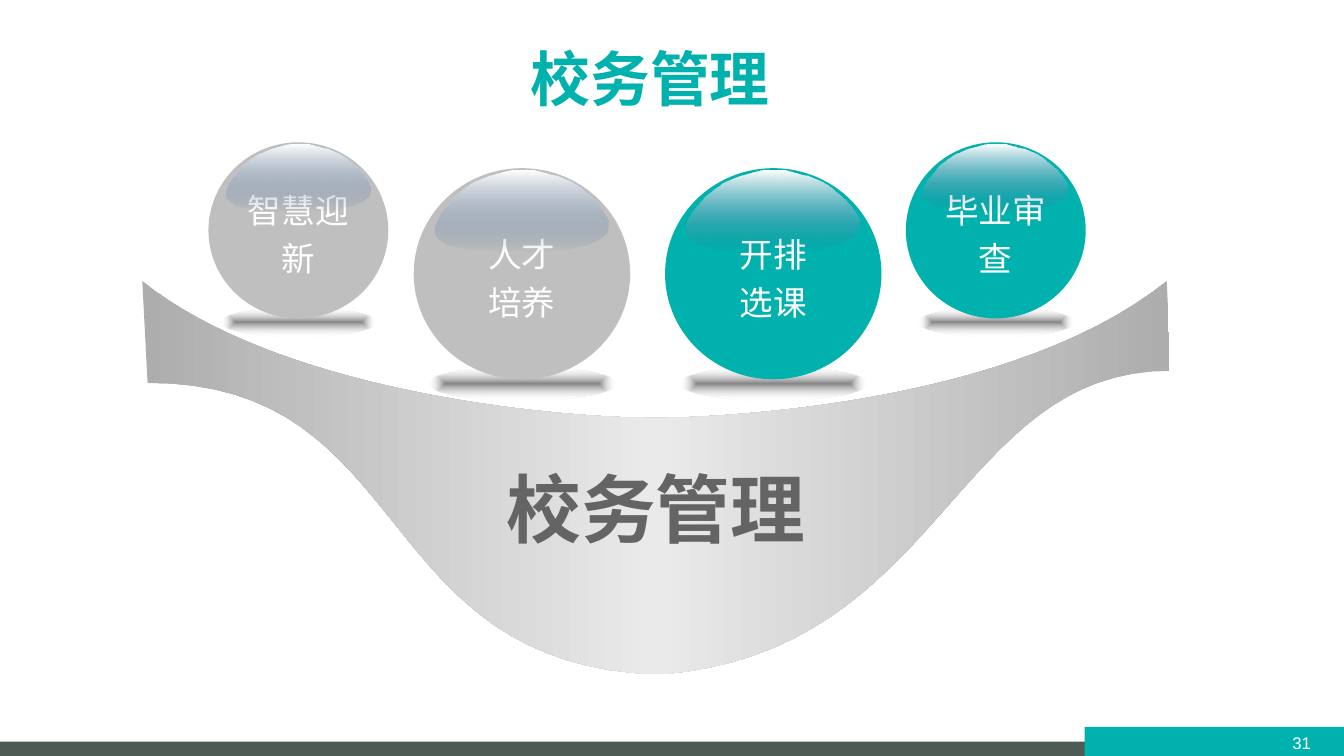
"""Build a slide of four glossy balls above a curved bowl."""
import pptx
import pptx.util
import pptx.oxml
import pptx.oxml.ns
import pptx.dml.color
import pptx.enum.shapes
import pptx.enum.text

Cm = pptx.util.Cm
Pt = pptx.util.Pt
HUES = {
    "teal": "00B1AD", "slate": "4E5A54", "gray": "BFBFBF", "white": "FFFFFF",
    "dark": "646464", "shade": "868686", "edge": "ADADAD", "mid": "EAEAEA",
    "blue": "376092",
}
CJK = "Noto Sans CJK SC"
SMALL = (3.4, 3.33)
LARGE = (4.09, 3.99)
BALLS = [
    ("毕业审查", 17.12, 2.69, SMALL, "teal"),
    ("开排\n选课", 12.57, 3.18, LARGE, "teal"),
    ("人才\n培养", 7.82, 3.18, LARGE, "gray"),
    ("智慧迎新", 3.94, 2.69, SMALL, "gray"),
]
GLOSS = [
    (125, 33), (127, 37), (127, 40), (126, 43), (125, 46), (122, 48),
    (119, 50), (115, 52), (110, 54), (105, 55), (99, 57), (93, 58),
    (86, 58), (79, 59), (45, 59), (39, 59), (33, 58), (28, 58), (22, 57),
    (17, 56), (13, 55), (9, 54), (6, 52), (3, 50), (1, 48), (0, 46),
    (0, 40), (1, 37), (4, 31), (9, 25), (14, 19), (19, 15), (26, 10),
    (32, 7), (40, 4), (47, 2), (56, 0), (73, 0), (81, 2), (89, 4),
    (97, 7), (104, 11), (110, 16), (116, 21), (121, 27),
]
BOWL = [
    [(22.05, 5.31), (22.05, 5.31), (22.1, 6.17), (22.1, 7.01)],
    [(22.1, 7.01), (18.03, 7.01), (17.83, 12.34), (12.47, 12.75)],
    [(12.47, 12.75), (6.96, 12.6), (7.9, 7.21), (2.79, 7.24)],
    [(2.69, 5.31), (5.16, 7.32), (10.13, 7.9), (12.45, 7.9)],
    [(12.45, 7.9), (12.45, 7.9), (18.87, 7.9), (22.05, 5.31)],
]


def tint(name):
    """Return the named colour."""
    return pptx.dml.color.RGBColor.from_string(HUES[name])


def finish(shape, hue=None):
    """Drop shadow and line, and fill with one colour if given."""
    shape.shadow.inherit = False
    shape.line.fill.background()
    if hue:
        shape.fill.solid()
        shape.fill.fore_color.rgb = tint(hue)
    else:
        shape.fill.background()


def blend(shape, stops, kind):
    """Fill a shape with gradient stops of position, colour and opacity."""
    marks = "".join(
        f'<a:gs pos="{pos * 1000}"><a:srgbClr val="{HUES[hue]}">'
        f'<a:alpha val="{alpha * 1000}"/></a:srgbClr></a:gs>'
        for pos, hue, alpha in stops)
    grad = pptx.oxml.parse_xml(
        f'<a:gradFill {pptx.oxml.ns.nsdecls("a")} rotWithShape="1">'
        f'<a:gsLst>{marks}</a:gsLst>{kind}</a:gradFill>')
    finish(shape)
    props = shape.element.spPr
    props.replace(props.find(pptx.oxml.ns.qn("a:noFill")), grad)


def linear(angle):
    """Return the direction of a linear gradient."""
    return f'<a:lin ang="{angle * 60000}" scaled="0"/>'


def write(shape, text, size, hue, font="Calibri", bold=False, gap=None,
          inset=(0.25, 0.13, 0.25, 0.13), anchor="MIDDLE"):
    """Set centred text and its format."""
    frame = shape.text_frame
    frame.text = text
    frame.word_wrap = True
    frame.vertical_anchor = pptx.enum.text.MSO_ANCHOR[anchor]
    (frame.margin_left, frame.margin_top,
     frame.margin_right, frame.margin_bottom) = map(Cm, inset)
    for para in frame.paragraphs:
        para.alignment = pptx.enum.text.PP_ALIGN.CENTER
        para.line_spacing = gap
        for run in para.runs:
            run.font.size = Pt(size)
            run.font.bold = bold
            run.font.name = font
            run.font.color.rgb = tint(hue)
            run.font._element.append(pptx.oxml.parse_xml(
                f'<a:ea {pptx.oxml.ns.nsdecls("a")} typeface="{CJK}"/>'))


def preset(slide, kind, *box):
    """Add a preset shape."""
    form = pptx.enum.shapes.MSO_SHAPE[kind]
    return slide.shapes.add_shape(form, *map(Cm, box))


def label(slide, box, *args, **style):
    """Add a text box."""
    write(slide.shapes.add_textbox(*map(Cm, box)), *args, **style)


def outline(slide, points):
    """Add a closed freeform through points in centimetres."""
    dots = [(Cm(x), Cm(y)) for x, y in points]
    maker = slide.shapes.build_freeform(*dots[0])
    maker.add_line_segments(dots[1:], close=True)
    return maker.convert_to_shape()


def curve(knots, steps=32):
    """Return points along a cubic curve."""
    dots = []
    for step in range(steps + 1):
        t = step / steps
        u = 1 - t
        parts = (u ** 3, 3 * u * u * t, 3 * u * t * t, t ** 3)
        dots.append(tuple(sum(p * k[axis] for p, k in zip(parts, knots))
                          for axis in (0, 1)))
    return dots


def shade(slide, left, top, size):
    """Add the soft shadow under a ball."""
    wide, high = size
    oval = preset(slide, "OVAL", left + wide * 0.07, top + high * 0.94,
                  wide * 0.86, high * 0.16)
    blend(oval, [(0, "shade", 100), (100, "white", 0)],
          '<a:path path="shape"><a:fillToRect l="50000" t="50000" '
          'r="50000" b="50000"/></a:path>')


def ball(slide, text, left, top, size, hue):
    """Add a labelled ball."""
    oval = preset(slide, "OVAL", left, top, *size)
    finish(oval, hue)
    write(oval, text, 18, "white", gap=1.2, inset=(0.24, 0, 0.24, 0))


def gloss(slide, left, top, size):
    """Add the highlight on a ball."""
    wide, high = size
    cap = outline(slide, [(left + wide * (0.1 + 0.8 * x / 127),
                           top + 0.05 + high * 0.38 * y / 59)
                          for x, y in GLOSS])
    blend(cap, [(0, "white", 100), (100, "blue", 0)], linear(90))


def bowl(slide):
    """Add the curved bowl with its title."""
    shape = outline(slide, [dot for part in BOWL for dot in curve(part)])
    blend(shape, [(0, "edge", 100), (50, "mid", 100), (100, "edge", 100)],
          linear(0))
    write(shape, "校务管理", 40, "dark", bold=True,
          inset=(0.25, 1.27, 0.25, 0.13))


def main():
    """Build and save the slide."""
    deck = pptx.Presentation()
    deck.slide_width, deck.slide_height = Cm(25.4), Cm(14.29)
    slide = deck.slides.add_slide(deck.slide_layouts[6])
    finish(preset(slide, "RECTANGLE", 0, 14.02, 25.4, 0.27), "slate")
    finish(preset(slide, "RECTANGLE", 20.5, 13.74, 4.9, 0.55), "teal")
    label(slide, (23.9, 13.67, 1.4, 0.76), "31", 9, "white", font="Arial")
    label(slide, (4.29, 0.66, 16, 1.63), "校务管理", 32, "teal",
          font=CJK, bold=True, anchor="TOP")
    for _, left, top, size, _ in BALLS:
        shade(slide, left, top, size)
    for item in BALLS:
        ball(slide, *item)
    bowl(slide)
    for _, left, top, size, _ in BALLS:
        gloss(slide, left, top, size)
    deck.save("out.pptx")


if __name__ == "__main__":
    main()
